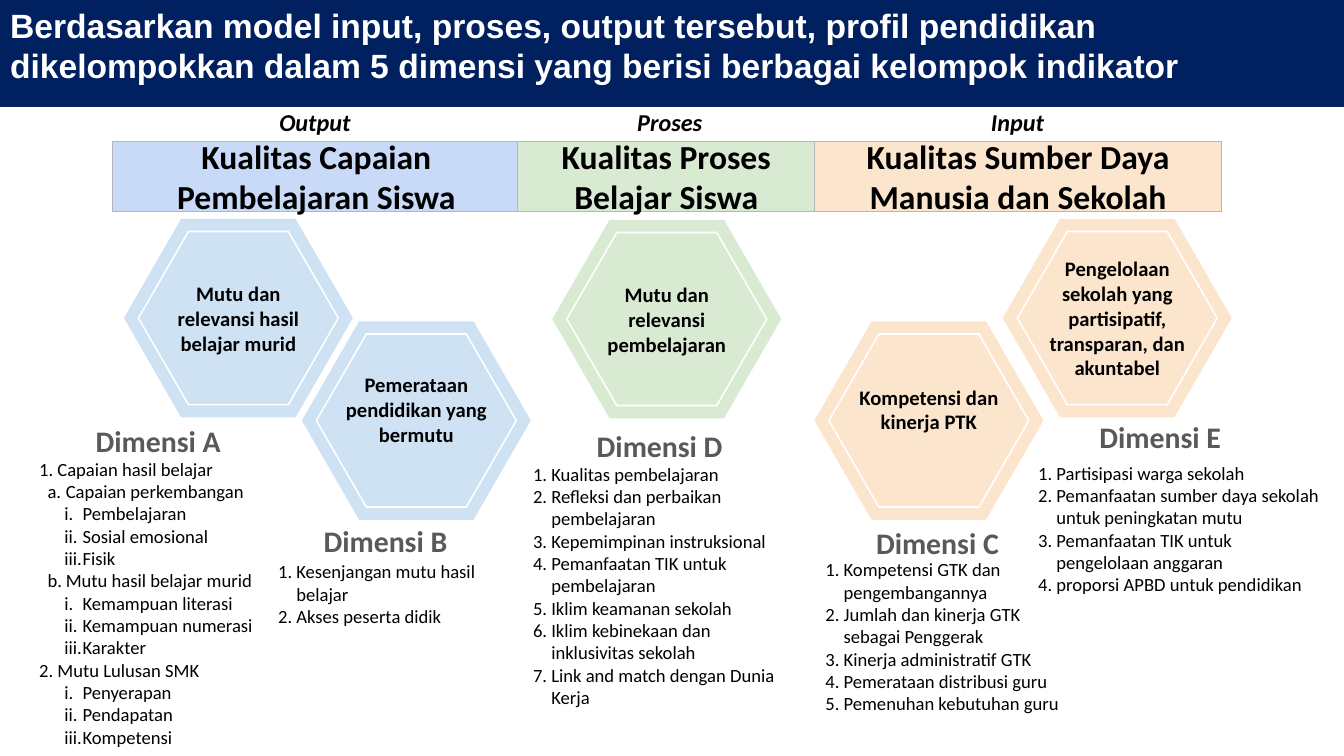
from dataclasses import dataclass

from lxml import etree
from pptx import Presentation
from pptx.dml.color import RGBColor
from pptx.enum.shapes import MSO_SHAPE
from pptx.enum.text import MSO_ANCHOR, MSO_AUTO_SIZE, PP_ALIGN
from pptx.oxml.ns import qn
from pptx.util import Pt

RECT = MSO_SHAPE.RECTANGLE
TOP, MIDDLE, BOTTOM = MSO_ANCHOR.TOP, MSO_ANCHOR.MIDDLE, MSO_ANCHOR.BOTTOM
LEFT, CENTER = PP_ALIGN.LEFT, PP_ALIGN.CENTER
FIXED = MSO_AUTO_SIZE.NONE

NAVY = RGBColor(0x00, 0x20, 0x60)
WHITE = RGBColor(0xFF, 0xFF, 0xFF)
BLACK = RGBColor(0x00, 0x00, 0x00)
GRAY = RGBColor(0x59, 0x59, 0x59)
BORDER = RGBColor(0xB7, 0xB7, 0xB7)
PERIWINKLE = RGBColor(0xC9, 0xDA, 0xF8)
BLUE = RGBColor(0xCF, 0xE2, 0xF3)
GREEN = RGBColor(0xD9, 0xEA, 0xD3)
PEACH = RGBColor(0xFC, 0xE5, 0xCD)

NUMBERING = ("arabicPeriod", "alphaLcPeriod", "romanLcPeriod")
INDENTS = (18, 24, 36)
HANGING = 13


@dataclass(frozen=True)
class Box:
    x: float
    y: float
    w: float
    h: float


@dataclass(frozen=True)
class Style:
    size: float
    color: RGBColor = BLACK
    bold: bool = True
    italic: bool = False
    font: str = "Calibri"


@dataclass(frozen=True)
class Stage:
    label: str
    label_box: Box
    banner: str
    banner_box: Box
    fill: RGBColor


@dataclass(frozen=True)
class Dimension:
    name: str
    topic: str
    cx: float
    cy: float
    topic_shift: float
    fill: RGBColor
    name_box: Box
    list_box: Box
    items: tuple[tuple[int, str], ...]


TITLE = Style(24, WHITE, font="Arial")
STAGE = Style(17.3, italic=True)
BANNER = Style(24)
TOPIC = Style(14.7)
NAME = Style(21.3, GRAY)
ITEM = Style(13.3, bold=False)

STAGES = (
    Stage("Output", Box(102.2, 73.4, 245.5, 27.4), "Kualitas Capaian Pembelajaran Siswa",
          Box(80.6, 100.8, 290.9, 50.4), PERIWINKLE),
    Stage("Proses", Box(354.2, 73.4, 248.4, 27.4), "Kualitas Proses Belajar Siswa",
          Box(369.4, 100.8, 213.1, 50.4), GREEN),
    Stage("Input", Box(602.6, 73.4, 248.4, 27.4), "Kualitas Sumber Daya Manusia dan Sekolah",
          Box(581.8, 100.8, 290.9, 50.4), PEACH),
)

DIMENSIONS = (
    Dimension("Dimensi A", "Mutu dan relevansi hasil belajar murid", 170.3, 227.2, 0, BLUE,
              Box(32.4, 295.9, 161.3, 35.3), Box(23, 323.3, 171.4, 209.5),
              ((0, "Capaian hasil belajar"), (1, "Capaian perkembangan"),
               (2, "Pembelajaran"), (2, "Sosial emosional"), (2, "Fisik"),
               (1, "Mutu hasil belajar murid"), (2, "Kemampuan literasi"),
               (2, "Kemampuan numerasi"), (2, "Karakter"), (0, "Mutu Lulusan SMK"),
               (2, "Penyerapan"), (2, "Pendapatan"), (2, "Kompetensi"))),
    Dimension("Dimensi B", "Pemerataan pendidikan yang bermutu", 297.4, 300.4, -8, BLUE,
              Box(193.7, 365, 163.4, 37.4), Box(193.7, 396.7, 162.7, 52.6),
              ((0, "Kesenjangan mutu hasil belajar"), (0, "Akses peserta didik"))),
    Dimension("Dimensi D", "Mutu dan relevansi pembelajaran", 476.3, 227.9, 0, GREEN,
              Box(375.1, 297.4, 192.2, 37.4), Box(375.8, 326.9, 192.2, 187.9),
              ((0, "Kualitas pembelajaran"), (0, "Refleksi dan perbaikan pembelajaran"),
               (0, "Kepemimpinan instruksional"), (0, "Pemanfaatan TIK untuk pembelajaran"),
               (0, "Iklim keamanan sekolah"), (0, "Iklim kebinekaan dan inklusivitas sekolah"),
               (0, "Link and match dengan Dunia Kerja"))),
    Dimension("Dimensi C", "Kompetensi dan kinerja PTK", 663.5, 300.4, -8, PEACH,
              Box(583.9, 373, 171.4, 31), Box(584.6, 395.3, 185.8, 127.4),
              ((0, "Kompetensi GTK dan pengembangannya"),
               (0, "Jumlah dan kinerja GTK sebagai Penggerak"),
               (0, "Kinerja administratif GTK"), (0, "Pemerataan distribusi guru"),
               (0, "Pemenuhan kebutuhan guru"))),
    Dimension("Dimensi E", "Pengelolaan sekolah yang partisipatif, transparan, dan akuntabel",
              798.1, 227.2, 0, PEACH,
              Box(736.6, 297.4, 184.3, 31), Box(736.6, 326.2, 205.9, 127.4),
              ((0, "Partisipasi warga sekolah"),
               (0, "Pemanfaatan sumber daya sekolah untuk peningkatan mutu"),
               (0, "Pemanfaatan TIK untuk pengelolaan anggaran"),
               (0, "proporsi APBD untuk pendidikan"))),
)


def place(sp, box: Box) -> None:
    sp.left, sp.top, sp.width, sp.height = Pt(box.x), Pt(box.y), Pt(box.w), Pt(box.h)


def frame(sp, anchor, inset_x: float, inset_y: float):
    tf = sp.text_frame
    tf.word_wrap = True
    tf.auto_size = FIXED
    tf.vertical_anchor = anchor
    tf.margin_left = tf.margin_right = Pt(inset_x)
    tf.margin_top = tf.margin_bottom = Pt(inset_y)
    return tf


def write(p, text: str, style: Style, align=CENTER) -> None:
    p.alignment = align
    p.space_before = Pt(0)
    r = p.add_run()
    r.text = text
    r.font.name = style.font
    r.font.size = Pt(style.size)
    r.font.bold = style.bold
    r.font.italic = style.italic
    r.font.color.rgb = style.color


def add_text(s, box: Box, text: str, style: Style, anchor, inset_x: float) -> None:
    sp = s.shapes.add_textbox(Pt(box.x), Pt(box.y), Pt(box.w), Pt(box.h))
    write(frame(sp, anchor, inset_x, 3.6).paragraphs[0], text, style)


def add_list(s, box: Box, items: tuple[tuple[int, str], ...]) -> None:
    sp = s.shapes.add_textbox(Pt(box.x), Pt(box.y), Pt(box.w), Pt(box.h))
    tf = frame(sp, TOP, 0, 3.6)
    for i, (level, text) in enumerate(items):
        p = tf.add_paragraph() if i else tf.paragraphs[0]
        p.level = level
        write(p, text, ITEM, LEFT)
        pPr = p._p.get_or_add_pPr()
        pPr.set("marL", str(Pt(INDENTS[level])))
        pPr.set("indent", str(-Pt(HANGING)))
        etree.SubElement(pPr, qn("a:buFont"), typeface="+mj-lt")
        etree.SubElement(pPr, qn("a:buAutoNum"), type=NUMBERING[level])


def hexagon(cx: float, cy: float, w: float, h: float) -> list[tuple[int, int]]:
    offsets = ((-2, 0), (-1, 2), (1, 2), (2, 0), (1, -2), (-1, -2))
    return [(Pt(cx + dx * w / 4), Pt(cy + dy * h / 4)) for dx, dy in offsets]


def add_outline(s, contours: list[list[tuple[int, int]]], fill: RGBColor) -> None:
    fb = s.shapes.build_freeform(*contours[0][0], scale=1.0)
    fb.add_line_segments(contours[0][1:], close=True)
    for contour in contours[1:]:
        fb.move_to(*contour[0])
        fb.add_line_segments(contour[1:], close=True)
    sp = fb.convert_to_shape()
    sp.shadow.inherit = False
    sp.fill.solid()
    sp.fill.fore_color.rgb = fill
    sp.line.fill.background()


def add_stage(s, stage: Stage, label) -> None:
    place(label, stage.label_box)
    p = frame(label, MIDDLE, 9.4, 9.4).paragraphs[0]
    write(p, stage.label, STAGE)
    pPr = p._p.get_or_add_pPr()
    pPr.set("marL", "0")
    pPr.set("indent", "0")
    etree.SubElement(pPr, qn("a:buNone"))
    b = stage.banner_box
    sp = s.shapes.add_shape(RECT, Pt(b.x), Pt(b.y), Pt(b.w), Pt(b.h))
    sp.shadow.inherit = False
    sp.fill.solid()
    sp.fill.fore_color.rgb = stage.fill
    sp.line.color.rgb = BORDER
    sp.line.width = Pt(0.75)
    write(frame(sp, MIDDLE, 9.4, 9.4).paragraphs[0], stage.banner, BANNER)


def add_dimension(s, d: Dimension) -> None:
    add_outline(s, [hexagon(d.cx, d.cy, 163.5, 141.8)], d.fill)
    ring = [hexagon(d.cx, d.cy, 144, 124.8), hexagon(d.cx, d.cy, 141.6, 122.4)[::-1]]
    add_outline(s, ring, WHITE)
    topic_box = Box(d.cx - 58.3, d.cy + d.topic_shift - 26.3, 116.6, 52.6)
    add_text(s, topic_box, d.topic, TOPIC, MIDDLE, 7.2)
    add_text(s, d.name_box, d.name, NAME, BOTTOM, 0)
    add_list(s, d.list_box, d.items)


def main() -> None:
    prs = Presentation()
    prs.slide_width, prs.slide_height = Pt(960), Pt(540)
    s = prs.slides.add_slide(prs.slide_layouts.get_by_name("Comparison"))
    title, *labels, spare = s.placeholders
    spare.element.getparent().remove(spare.element)
    place(title, Box(0, 0, 960, 76.3))
    title.fill.solid()
    title.fill.fore_color.rgb = NAVY
    write(frame(title, TOP, 7.2, 3.6).paragraphs[0],
          "Berdasarkan model input, proses, output tersebut, profil pendidikan "
          "dikelompokkan dalam 5 dimensi yang berisi berbagai kelompok indikator", TITLE, LEFT)
    for stage, label in zip(STAGES, labels):
        add_stage(s, stage, label)
    for d in DIMENSIONS:
        add_dimension(s, d)
    prs.save("out.pptx")


if __name__ == "__main__":
    main()
